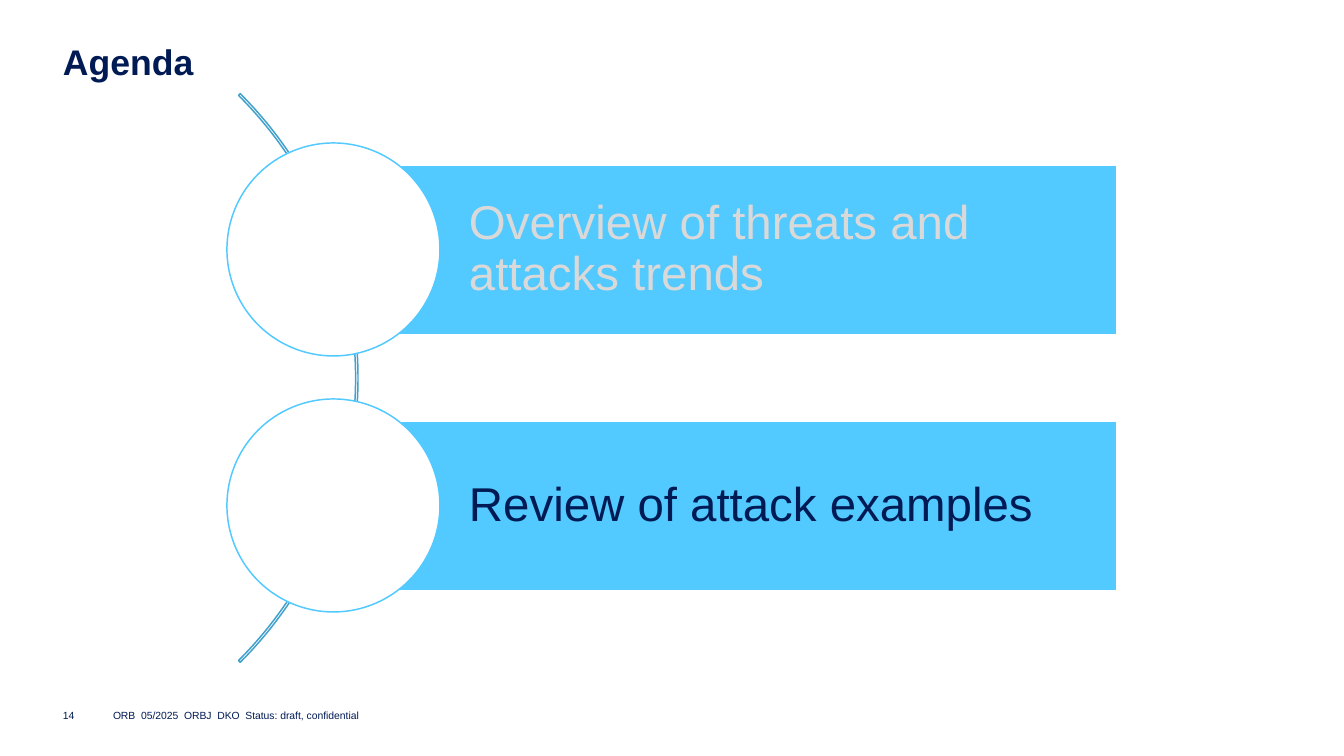
"""Build the agenda slide with two topics along an arc."""
from pptx import Presentation
from pptx import util as u
from pptx.dml.color import RGBColor
from pptx.enum import shapes, text

PX = 8572.5
NAVY = RGBColor(0x00, 0x1A, 0x54)
SKY = RGBColor(0x52, 0xC9, 0xFF)
ARC_BLUE = RGBColor(0x42, 0xA1, 0xCC)
GREY = RGBColor(0xD9, 0xD9, 0xD9)
WHITE = RGBColor(0xFF, 0xFF, 0xFF)


def add_outline(kind, place, fill, line):
    shape = page.shapes.add_shape(kind, *[round(n * PX) for n in place])
    shape.shadow.inherit = False
    if fill is None:
        shape.fill.background()
    else:
        shape.fill.solid()
        shape.fill.fore_color.rgb = fill
    shape.line.color.rgb = line
    shape.line.width = u.Pt(1)
    return shape


def write(box, words, size, color, margins, anchor, bold=False):
    frame = box.text_frame
    frame.margin_left, frame.margin_top, frame.margin_right, frame.margin_bottom = [
        round(n * PX) for n in margins]
    frame.vertical_anchor = anchor
    para = frame.paragraphs[0]
    para.alignment = text.PP_ALIGN.LEFT
    span = para.add_run()
    span.text = words
    span.font.name = "Arial"
    span.font.size = u.Pt(size)
    span.font.bold = bold
    span.font.color.rgb = color
    return para


deck = Presentation()
deck.slide_width = round(1344 * PX)
deck.slide_height = round(756 * PX)
page = deck.slides.add_slide(deck.slide_layouts[5])

title = page.shapes.title
title.left, title.top, title.width, title.height = [
    round(n * PX) for n in (63, 42, 1218, 43)]
para = write(title, "Agenda", 24, NAVY, (0, 0, 0, 0), text.MSO_ANCHOR.TOP, True)
para.line_spacing = 0.97
para.space_before = u.Pt(0)
title.text_frame.auto_size = text.MSO_AUTO_SIZE.SHAPE_TO_FIT_TEXT

arc = add_outline(shapes.MSO_SHAPE.BLOCK_ARC, (-446, -24, 804, 804), None, ARC_BLUE)
for index, value in enumerate((189, 27, 0.003)):
    arc.adjustments[index] = value

topics = [
    ("Overview of threats and attacks trends", GREY),
    ("Review of attack examples", NAVY),
]
for row, (topic, color) in enumerate(topics):
    top = 143 + 256 * row
    bar = add_outline(shapes.MSO_SHAPE.RECTANGLE, (334, top + 22, 783, 170), SKY, WHITE)
    bar.text_frame.word_wrap = True
    para = write(bar, topic, 32, color, (135, 10, 10, 10), text.MSO_ANCHOR.MIDDLE)
    para.line_spacing = 0.9
    add_outline(shapes.MSO_SHAPE.OVAL, (227, top, 213, 213), WHITE, SKY)

footers = [
    (63, 42, "14"),
    (113, 538, "ORB  05/2025  ORBJ  DKO  Status: draft, confidential"),
]
for left, width, words in footers:
    box = page.shapes.add_textbox(*[round(n * PX) for n in (left, 705, width, 21)])
    box.text_frame.word_wrap = False
    write(box, words, 7, NAVY, (0, 0, 0, 0), text.MSO_ANCHOR.MIDDLE)

deck.save("out.pptx")
